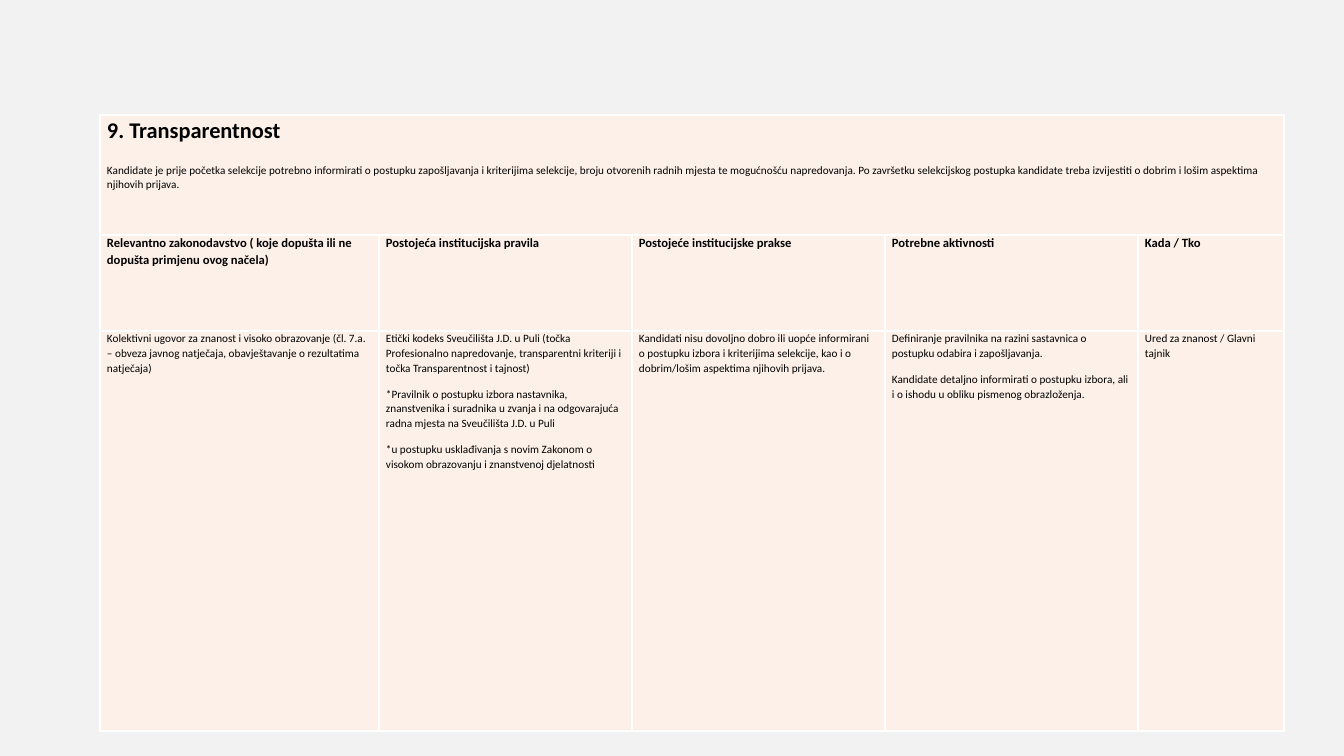
from lxml.etree import SubElement
from pptx import Presentation
from pptx.dml.color import RGBColor
from pptx.oxml.ns import qn
from pptx.util import Pt

PAGE_GREY = RGBColor(0xF2, 0xF2, 0xF2)
CELL_CREAM = RGBColor(0xFD, 0xF0, 0xE8)
BORDER_WHITE = RGBColor(0xFF, 0xFF, 0xFF)
TEXT_BLACK = RGBColor(0x00, 0x00, 0x00)

COLUMN_WIDTHS = [279, 253, 253, 253, 146]
ROW_HEIGHTS = [120, 96, 400]

PRINCIPLE = "9. Transparentnost"
DESCRIPTION = (
    "Kandidate je prije početka selekcije potrebno informirati o postupku zapošljavanja "
    "i kriterijima selekcije, broju otvorenih radnih mjesta te mogućnošću napredovanja. "
    "Po završetku selekcijskog postupka kandidate treba izvijestiti o dobrim i lošim "
    "aspektima njihovih prijava."
)
HEADINGS = [
    "Relevantno zakonodavstvo ( koje dopušta ili ne dopušta primjenu ovog načela)",
    "Postojeća institucijska pravila",
    "Postojeće institucijske prakse",
    "Potrebne aktivnosti",
    "Kada / Tko",
]
DETAILS = [
    ["Kolektivni ugovor za znanost i visoko obrazovanje (čl. 7.a. – obveza javnog "
     "natječaja, obavještavanje o rezultatima natječaja)"],
    ["Etički kodeks Sveučilišta J.D. u Puli (točka Profesionalno napredovanje, "
     "transparentni kriteriji i točka Transparentnost i tajnost)",
     "*Pravilnik o postupku izbora nastavnika, znanstvenika i suradnika u zvanja i na "
     "odgovarajuća radna mjesta na Sveučilišta J.D. u Puli",
     "*u postupku usklađivanja s novim Zakonom o visokom obrazovanju i znanstvenoj "
     "djelatnosti"],
    ["Kandidati nisu dovoljno dobro ili uopće informirani o postupku izbora i kriterijima "
     "selekcije, kao i o dobrim/lošim aspektima njihovih prijava."],
    ["Definiranje pravilnika na razini sastavnica o postupku odabira i zapošljavanja.",
     "Kandidate detaljno informirati o postupku izbora, ali i o ishodu u obliku pismenog "
     "obrazloženja."],
    ["Ured za znanost / Glavni tajnik"],
]


class SlideBuilder:
    """Holds the style and the current slide."""

    font_name = "Calibri"
    line_spacing = 1.07
    scale = 914400 / 100.8

    def __init__(self, deck, width, height):
        deck.slide_width = self.px(width)
        deck.slide_height = self.px(height)
        self.page = deck.slides.add_slide(deck.slide_layouts[6])
        background = self.page.background.fill
        background.solid()
        background.fore_color.rgb = PAGE_GREY

    def px(self, length):
        return round(length * self.scale)

    def table(self, left, top, widths, heights):
        frame = self.page.shapes.add_table(
            len(heights), len(widths), self.px(left), self.px(top),
            self.px(sum(widths)), self.px(sum(heights)))
        table = frame.table
        table.first_row = table.horz_banding = False
        for column, width in zip(table.columns, widths):
            column.width = self.px(width)
        for row, height in zip(table.rows, heights):
            row.height = self.px(height)
        for cell in table.iter_cells():
            self.format_cell(cell)
        return table

    def format_cell(self, cell):
        cell.margin_left = cell.margin_right = self.px(7)
        cell.margin_top = cell.margin_bottom = 0
        properties = cell._tc.get_or_add_tcPr()
        for side in ("a:lnL", "a:lnR", "a:lnT", "a:lnB"):
            border = SubElement(properties, qn(side), w=str(Pt(1)))
            paint = SubElement(border, qn("a:solidFill"))
            SubElement(paint, qn("a:srgbClr"), val=str(BORDER_WHITE))
        cell.fill.solid()
        cell.fill.fore_color.rgb = CELL_CREAM

    def cell_text(self, cell, texts, sizes, bolds, gap):
        cell.text_frame.text = "\n".join(texts)
        for para, size, bold in zip(cell.text_frame.paragraphs, sizes, bolds):
            para.line_spacing = self.line_spacing
            para.space_after = Pt(gap)
            for span in para.runs:
                span.font.name = self.font_name
                span.font.size = Pt(size)
                span.font.bold = bold
                span.font.color.rgb = TEXT_BLACK


def main():
    deck = Presentation()
    builder = SlideBuilder(deck, 1344, 756)
    table = builder.table(100, 115, COLUMN_WIDTHS, ROW_HEIGHTS)

    # Principle and its description across the full width
    table.cell(0, 0).merge(table.cell(0, len(COLUMN_WIDTHS) - 1))
    builder.cell_text(table.cell(0, 0), [PRINCIPLE, DESCRIPTION], [16, 8], [True, False], 13)

    # Column headings and details
    for column, (heading, details) in enumerate(zip(HEADINGS, DETAILS)):
        builder.cell_text(table.cell(1, column), [heading], [9], [True], 0)
        count = len(details)
        builder.cell_text(table.cell(2, column), details, [8] * count, [False] * count, 8)

    deck.save("out.pptx")


if __name__ == "__main__":
    main()
